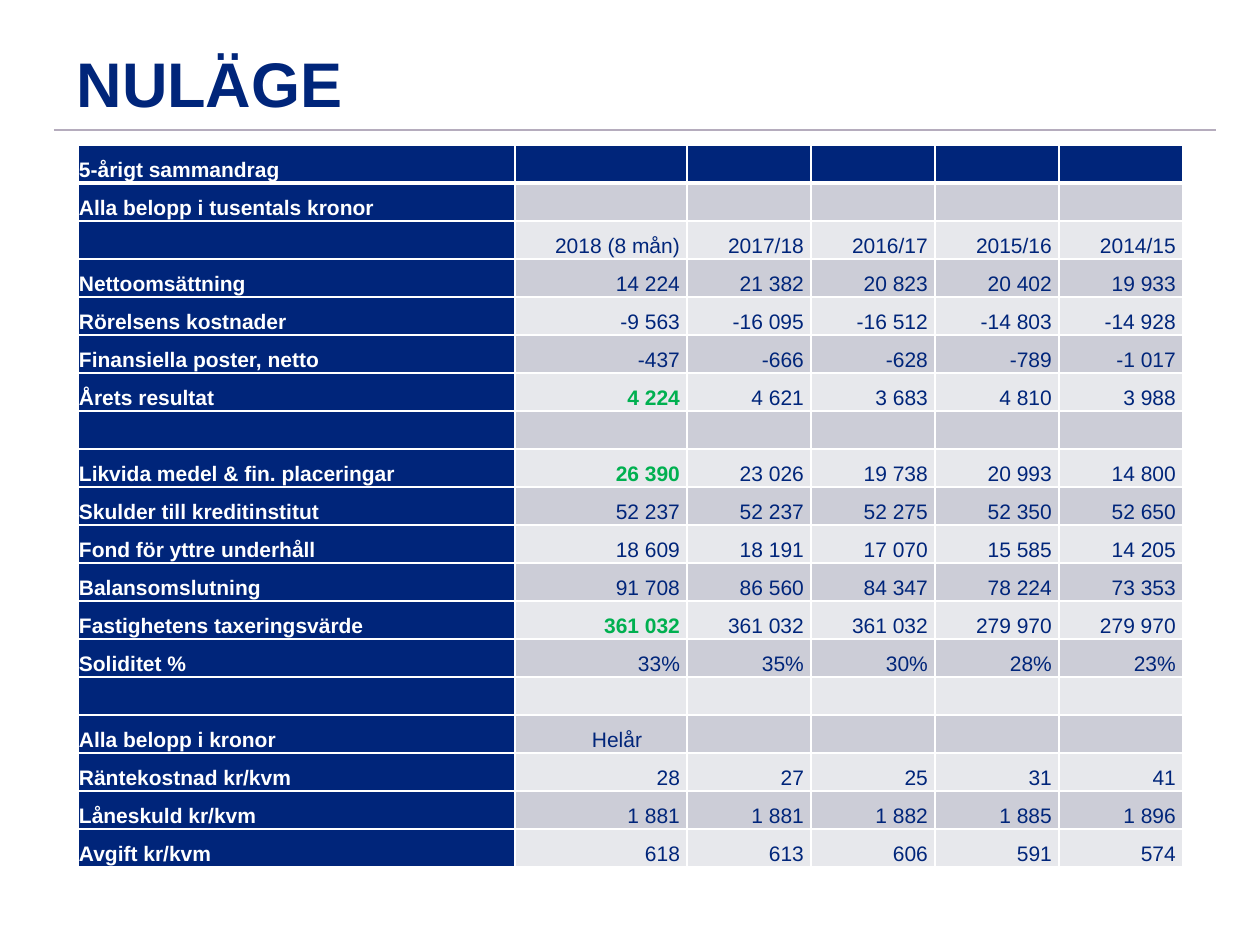
from typing import NamedTuple

from lxml.etree import SubElement
from pptx import Presentation
from pptx.dml.color import RGBColor
from pptx.enum.shapes import MSO_CONNECTOR as Connector
from pptx.enum.text import MSO_ANCHOR as Anchor, MSO_AUTO_SIZE as AutoSize, PP_ALIGN as Align
from pptx.oxml import parse_xml
from pptx.oxml.ns import nsdecls, qn
from pptx.util import Pt

PX = 914400 // 126
NAVY = RGBColor(0x00, 0x25, 0x7A)
WHITE = RGBColor(0xFF, 0xFF, 0xFF)
GREEN = RGBColor(0x00, 0xB0, 0x50)
DARK_BAND = RGBColor(0xCC, 0xCD, 0xD7)
LIGHT_BAND = RGBColor(0xE7, 0xE8, 0xEC)
RULE_GREY = RGBColor(0xB5, 0xAC, 0xBD)

TABLE_LEFT, TABLE_TOP = 78, 145
COLUMN_WIDTHS = (437, 172, 124, 124, 124, 124)
ROW_HEIGHT = 38
CELL_INSET, NUMBER_INSET, NOTE_INSET = 1, 7, 77


class Row(NamedTuple):
    label: str = ""
    values: tuple[str, ...] = ()
    highlight: bool = False  # first value in bold green


ROWS = (
    Row("5-årigt sammandrag"),
    Row("Alla belopp i tusentals kronor"),
    Row("", ("2018 (8 mån)", "2017/18", "2016/17", "2015/16", "2014/15")),
    Row("Nettoomsättning", ("14 224", "21 382", "20 823", "20 402", "19 933")),
    Row("Rörelsens kostnader", ("-9 563", "-16 095", "-16 512", "-14 803", "-14 928")),
    Row("Finansiella poster, netto", ("-437", "-666", "-628", "-789", "-1 017")),
    Row("Årets resultat", ("4 224", "4 621", "3 683", "4 810", "3 988"), True),
    Row(),
    Row("Likvida medel & fin. placeringar", ("26 390", "23 026", "19 738", "20 993", "14 800"), True),
    Row("Skulder till kreditinstitut", ("52 237", "52 237", "52 275", "52 350", "52 650")),
    Row("Fond för yttre underhåll", ("18 609", "18 191", "17 070", "15 585", "14 205")),
    Row("Balansomslutning", ("91 708", "86 560", "84 347", "78 224", "73 353")),
    Row("Fastighetens taxeringsvärde", ("361 032", "361 032", "361 032", "279 970", "279 970"), True),
    Row("Soliditet %", ("33%", "35%", "30%", "28%", "23%")),
    Row(),
    Row("Alla belopp i kronor", ("Helår",)),
    Row("Räntekostnad kr/kvm", ("28", "27", "25", "31", "41")),
    Row("Låneskuld kr/kvm", ("1 881", "1 881", "1 882", "1 885", "1 896")),
    Row("Avgift kr/kvm", ("618", "613", "606", "591", "574")),
)


def write_text(text_frame, text: str, *, size: int, color: RGBColor, bold: bool = False,
               align=Align.LEFT, spacing: float = 1.0) -> None:
    paragraph = text_frame.paragraphs[0]
    paragraph.alignment = align
    paragraph.line_spacing = spacing
    if not text:
        # An empty cell still needs a small font to keep its row height
        paragraph._p.get_or_add_endParaRPr().set("sz", str(size * 100))
        return
    run = paragraph.add_run()
    run.text = text
    run.font.name = "Arial"
    run.font.size = Pt(size)
    run.font.bold = bold
    run.font.color.rgb = color


def set_borders(cell, *, top: int, bottom: int) -> None:
    properties = cell._tc.get_or_add_tcPr()
    edges = (("lnL", 1), ("lnR", 1), ("lnT", top), ("lnB", bottom))
    for index, (tag, width) in enumerate(edges):
        properties.insert(index, parse_xml(
            f'<a:{tag} {nsdecls("a")} w="{Pt(width)}"><a:solidFill>'
            f'<a:srgbClr val="{WHITE}"/></a:solidFill></a:{tag}>'))


def fill_cell(cell, row: Row, row_index: int, column_index: int) -> None:
    is_label = column_index == 0
    is_highlight = row.highlight and column_index == 1
    is_note = len(row.values) == 1
    texts = (row.label, *row.values)
    text = texts[column_index] if column_index < len(texts) else ""

    cell.vertical_anchor = Anchor.BOTTOM
    cell.margin_top = cell.margin_bottom = CELL_INSET * PX
    cell.margin_left = (NOTE_INSET if is_note and column_index == 1 else CELL_INSET) * PX
    cell.margin_right = (CELL_INSET if is_label else NUMBER_INSET) * PX
    cell.fill.solid()
    if is_label or row_index == 0:
        cell.fill.fore_color.rgb = NAVY
    else:
        cell.fill.fore_color.rgb = DARK_BAND if row_index % 2 else LIGHT_BAND
    set_borders(cell, top=3 if row_index == 1 else 1, bottom=3 if row_index == 0 else 1)
    write_text(cell.text_frame, text, size=12, spacing=1.07,
               color=WHITE if is_label else GREEN if is_highlight else NAVY,
               bold=is_label or is_highlight,
               align=Align.LEFT if is_label or is_note else Align.RIGHT)


def add_summary_table(slide) -> None:
    table = slide.shapes.add_table(
        len(ROWS), len(COLUMN_WIDTHS), TABLE_LEFT * PX, TABLE_TOP * PX,
        sum(COLUMN_WIDTHS) * PX, len(ROWS) * ROW_HEIGHT * PX).table
    table.first_col = True
    for column, width in zip(table.columns, COLUMN_WIDTHS):
        column.width = width * PX
    for row_index, row in enumerate(ROWS):
        table.rows[row_index].height = ROW_HEIGHT * PX
        for column_index in range(len(COLUMN_WIDTHS)):
            fill_cell(table.cell(row_index, column_index), row, row_index, column_index)


def add_rule(slide, left: int, right: int, y: int) -> None:
    rule = slide.shapes.add_connector(Connector.STRAIGHT, left * PX, y * PX, right * PX, y * PX)
    rule.line.color.rgb = RULE_GREY
    rule.line.width = Pt(1.5)
    SubElement(rule._element.spPr, qn("a:effectLst"))


def main() -> None:
    presentation = Presentation()
    presentation.slide_width, presentation.slide_height = 1260 * PX, 945 * PX
    slide = presentation.slides.add_slide(presentation.slide_layouts[5])

    # Title and the rule under it
    title = slide.shapes.title
    title.left, title.top, title.width, title.height = (n * PX for n in (64, 26, 1105, 100))
    title.text_frame.vertical_anchor = Anchor.BOTTOM
    title.text_frame.auto_size = AutoSize.NONE
    write_text(title.text_frame, "NULÄGE", size=36, color=NAVY, bold=True)
    add_rule(slide, 54, 1216, 130)

    # Five-year summary
    add_summary_table(slide)
    presentation.save("out.pptx")


if __name__ == "__main__":
    main()
